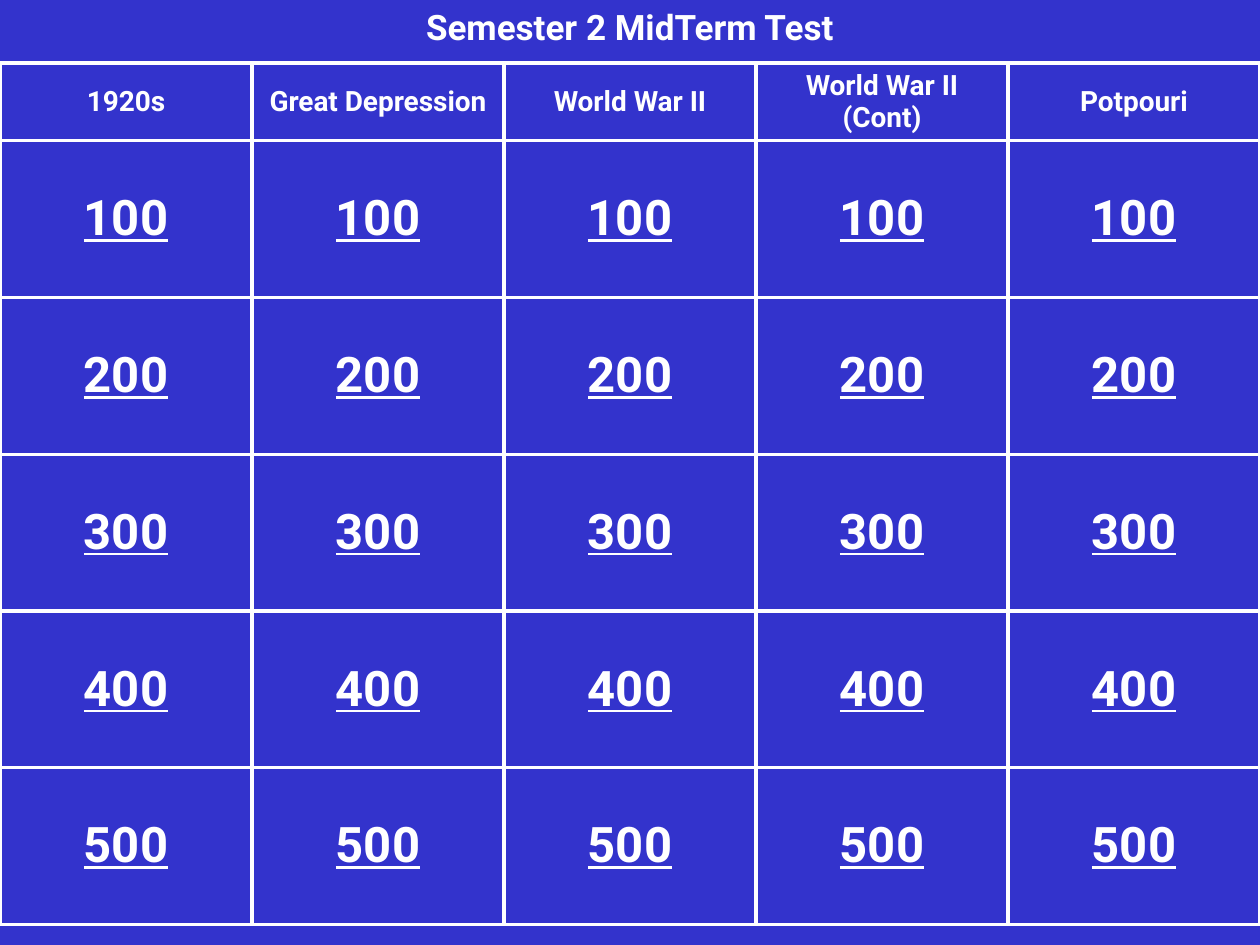
from dataclasses import dataclass

from lxml import etree
from pptx import Presentation
from pptx import util as u
from pptx.dml.color import RGBColor
from pptx.enum import text
from pptx.oxml import ns

BLUE = RGBColor(0x33, 0x33, 0xCC)
WHITE = RGBColor(0xFF, 0xFF, 0xFF)
FONT = "Roboto"
CATEGORIES = ["1920s", "Great Depression", "World War II",
              "World War II (Cont)", "Potpouri"]
POINTS = range(100, 600, 100)


@dataclass
class BoardRow:
    labels: list[str]
    height: u.Length
    size: int
    underline: bool = False


def format_text(frame, size: int, underline: bool = False) -> None:
    para = frame.paragraphs[0]
    para.alignment = text.PP_ALIGN.CENTER
    para.font.name = FONT
    para.font.size = u.Pt(size)
    para.font.bold = True
    para.font.underline = underline
    para.font.color.rgb = WHITE


def add_space_before(para, percent: int) -> None:
    spacing = etree.Element(ns.qn("a:spcBef"))
    etree.SubElement(spacing, ns.qn("a:spcPct"), val=str(percent * 1000))
    para._p.get_or_add_pPr().insert(0, spacing)


def add_borders(cell, width: u.Length) -> None:
    properties = cell._tc.get_or_add_tcPr()
    for side in ("lnL", "lnR", "lnT", "lnB"):
        line = etree.SubElement(properties, ns.qn(f"a:{side}"), w=str(int(width)))
        fill = etree.SubElement(line, ns.qn("a:solidFill"))
        etree.SubElement(fill, ns.qn("a:srgbClr"), val=str(WHITE))


def fill_cell(cell, label: str, row: BoardRow) -> None:
    cell.text = label
    cell.vertical_anchor = text.MSO_ANCHOR.MIDDLE
    add_borders(cell, u.Pt(2.25))
    cell.fill.solid()
    cell.fill.fore_color.rgb = BLUE
    format_text(cell.text_frame, row.size, row.underline)
    add_space_before(cell.text_frame.paragraphs[0], 20)


def add_board(page, rows: list[BoardRow]) -> None:
    table = page.shapes.add_table(len(rows), len(CATEGORIES), u.Cm(0), u.Cm(1.27),
                                  u.Cm(25.4), u.Cm(17.4)).table
    table.first_row = False
    table.horz_banding = False
    for row_index, row in enumerate(rows):
        table.rows[row_index].height = row.height
        for column_index, label in enumerate(row.labels):
            fill_cell(table.cell(row_index, column_index), label, row)


def add_title(page, wording: str) -> None:
    title = page.shapes.title
    title.left, title.top = u.Cm(1.9), u.Cm(0)
    title.width, title.height = u.Cm(21.6), u.Cm(1.07)
    frame = title.text_frame
    frame.text = wording
    frame.vertical_anchor = text.MSO_ANCHOR.MIDDLE
    frame.auto_size = text.MSO_AUTO_SIZE.NONE
    format_text(frame, 20)


def main() -> None:
    deck = Presentation()
    deck.slide_width, deck.slide_height = u.Cm(25.4), u.Cm(19.05)

    # Page with a title only
    page = deck.slides.add_slide(deck.slide_layouts[5])
    page.background.fill.solid()
    page.background.fill.fore_color.rgb = BLUE
    add_title(page, "Semester 2 MidTerm Test")

    # Game board: categories, then one row per point value
    header = BoardRow(CATEGORIES, u.Cm(1.35), 16)
    values = [BoardRow([str(points)] * len(CATEGORIES), u.Cm(3.16), 28, True)
              for points in POINTS]
    add_board(page, [header, *values])

    deck.save("out.pptx")


if __name__ == "__main__":
    main()
